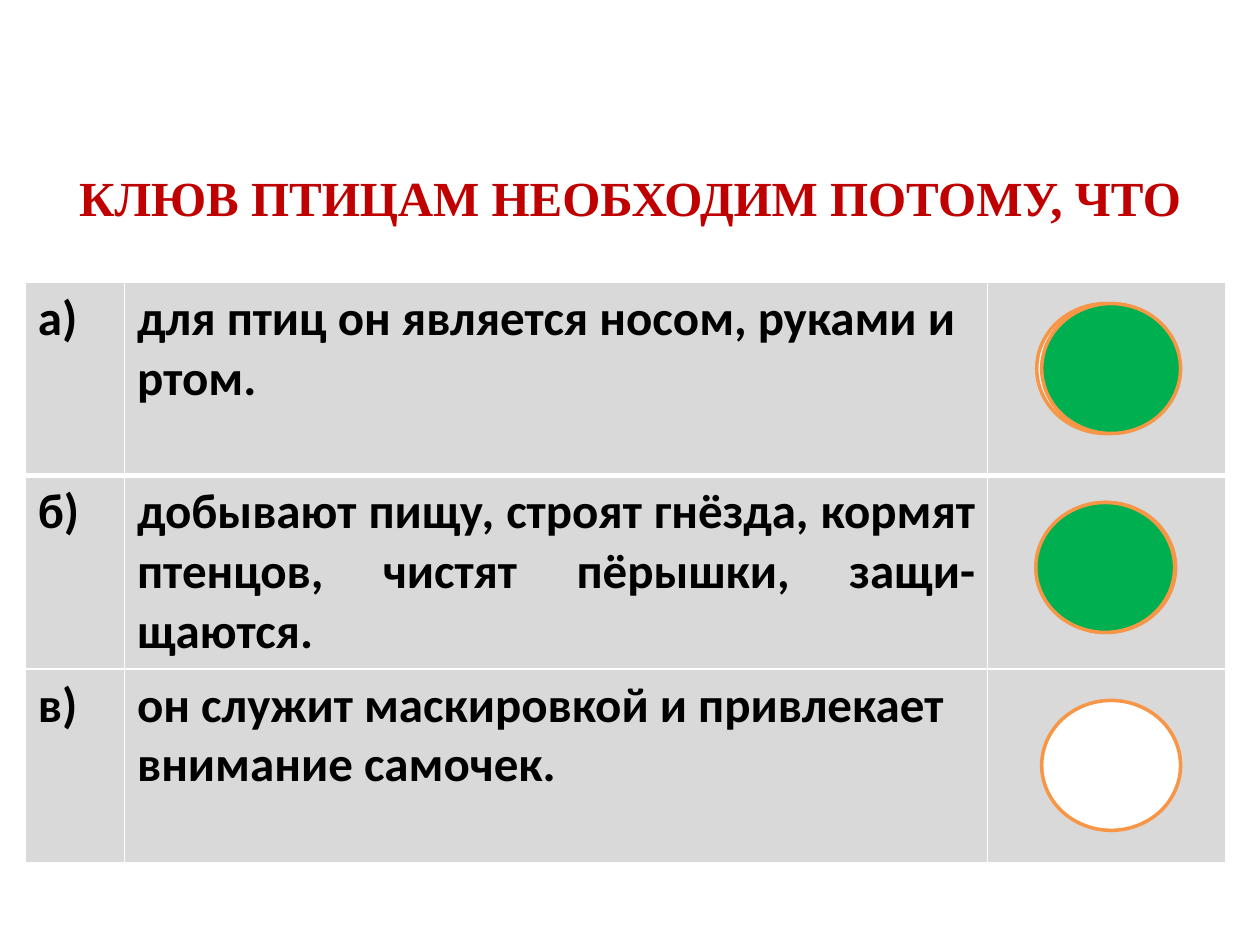
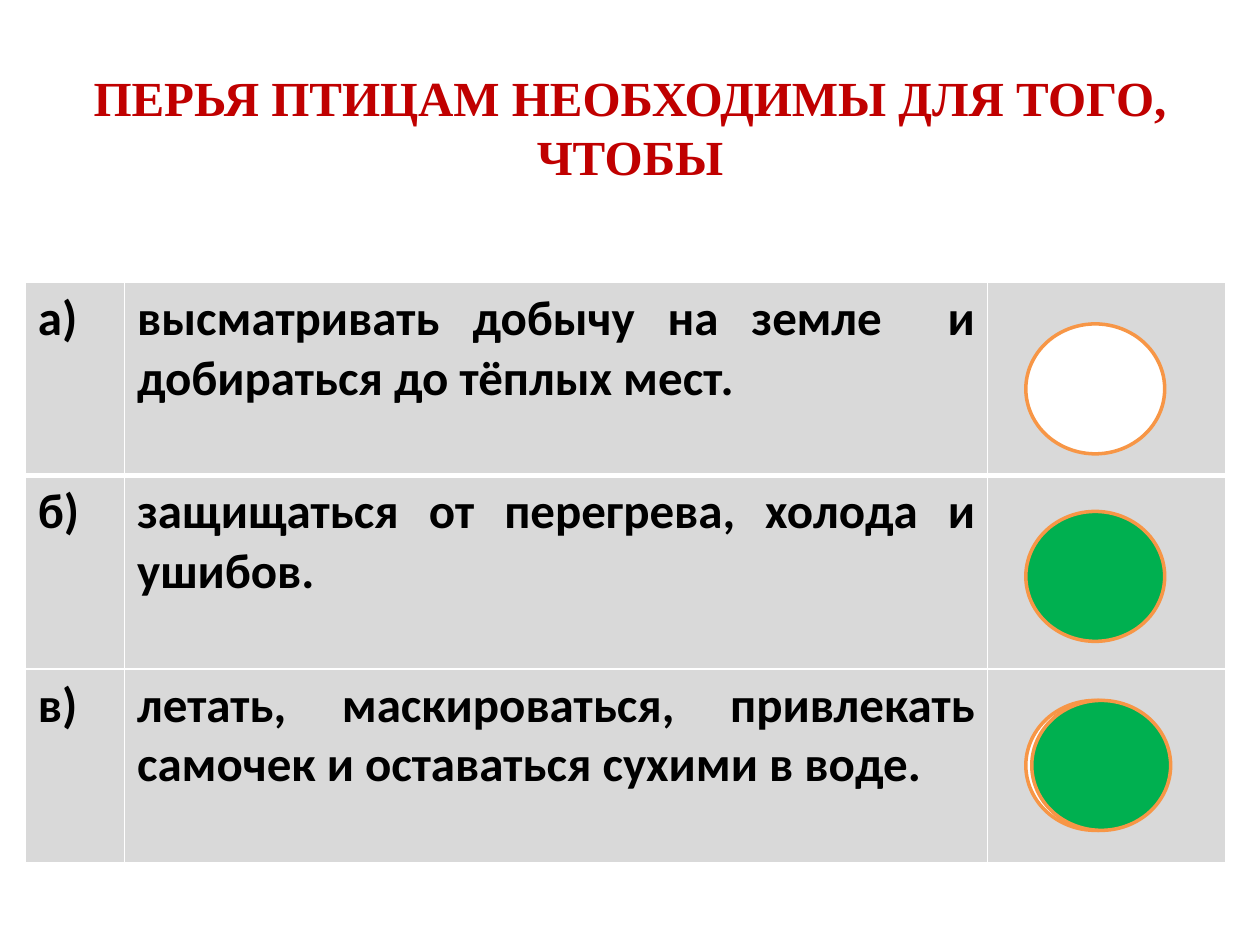
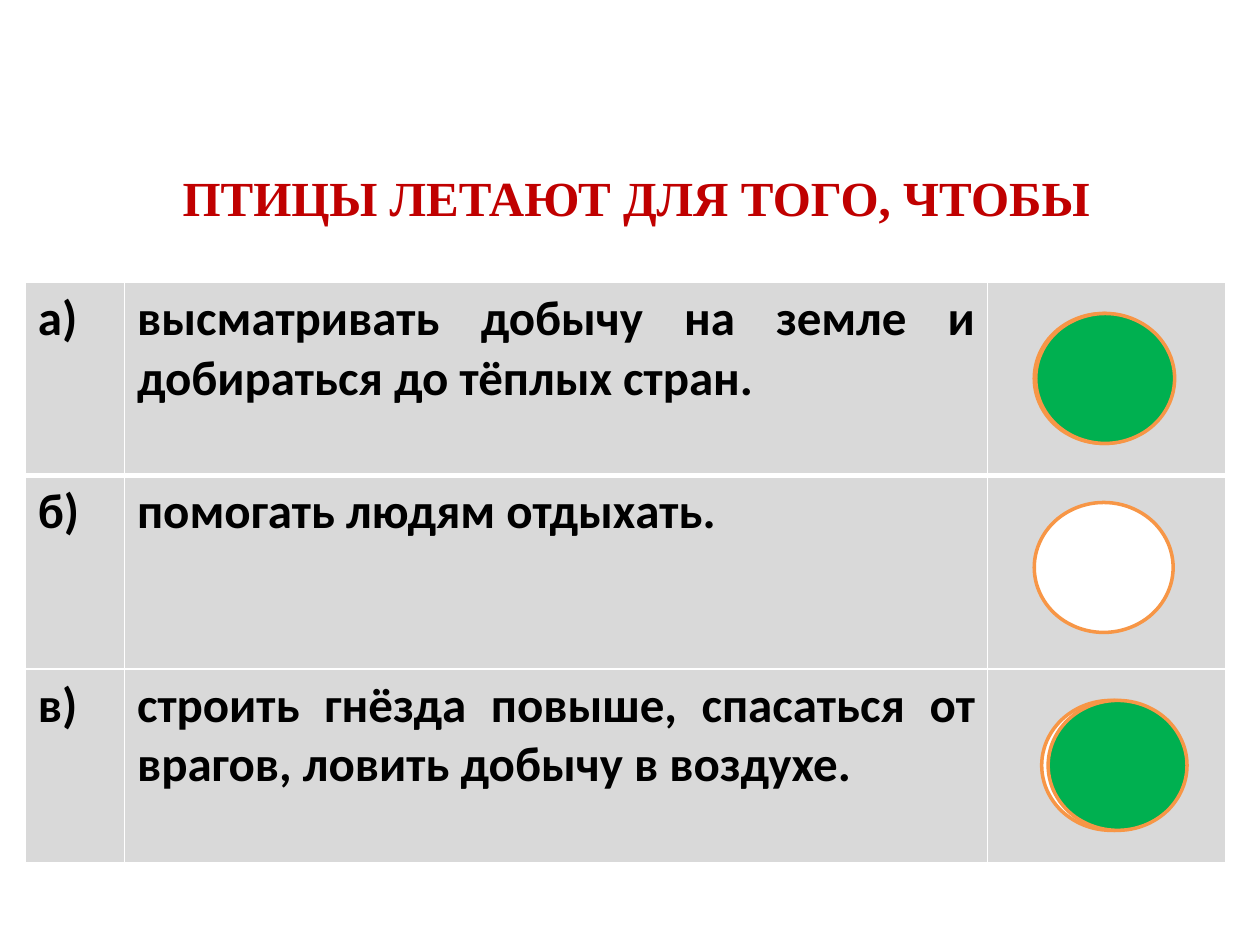
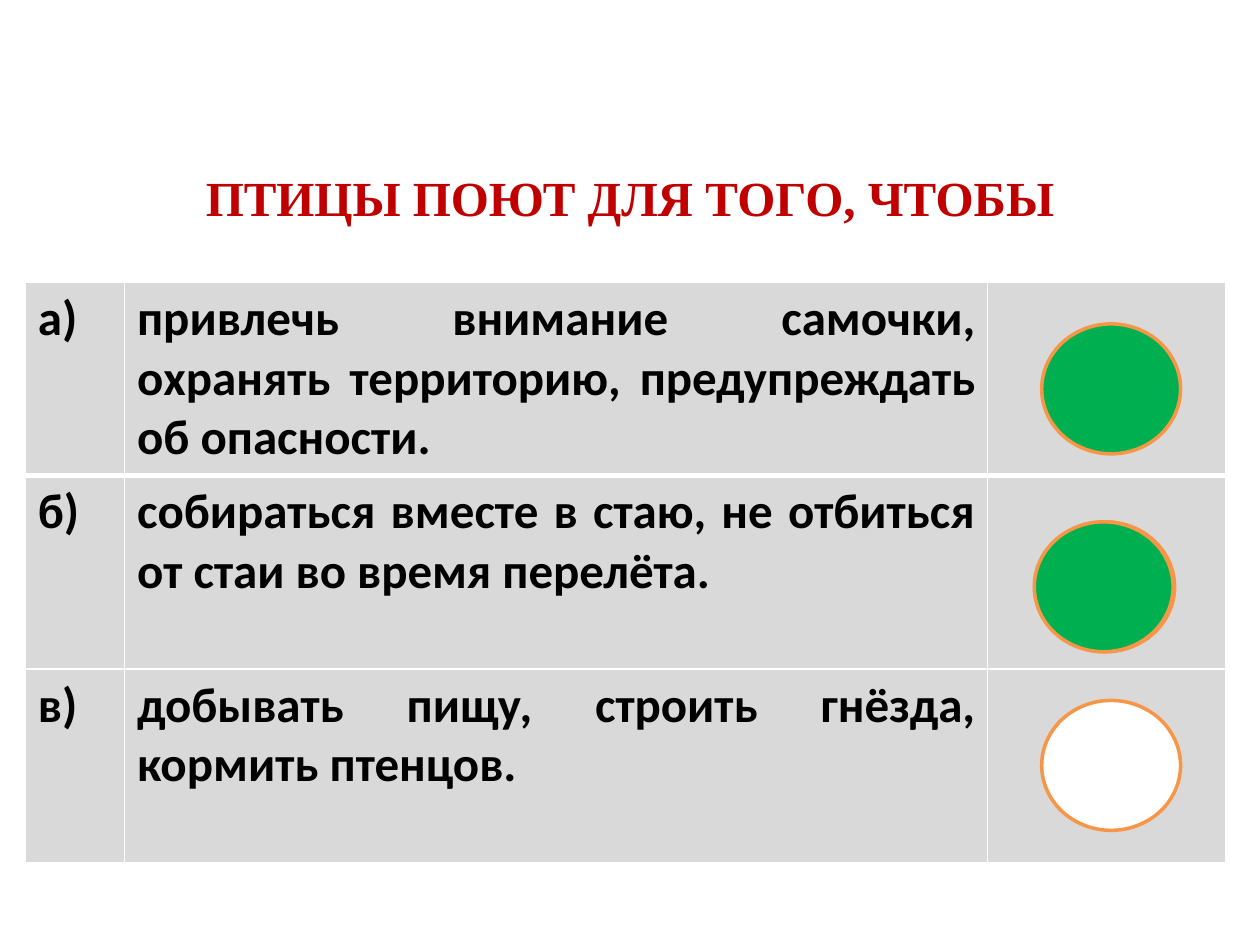
from dataclasses import dataclass

from lxml.etree import SubElement
from pptx import Presentation
from pptx.dml.color import RGBColor
from pptx.enum.shapes import MSO_SHAPE as Shape
from pptx.enum.text import MSO_ANCHOR as Anchor, MSO_AUTO_SIZE as AutoSize, PP_ALIGN as Align
from pptx.oxml.ns import qn
from pptx.util import Cm, Pt


@dataclass(frozen=True)
class Theme:
    title: str = "C00000"
    text: str = "000000"
    cell: str = "D9D9D9"
    border: str = "FFFFFF"
    blank: str = "FFFFFF"
    correct: str = "00B050"
    outline: str = "F79646"
    title_font: str = "Times New Roman"
    body_font: str = "Calibri"
    size: int = 28
    outline_width: int = 2
    thin: int = 1
    thick: int = 3


@dataclass(frozen=True)
class Answer:
    text: str
    align: Align = Align.JUSTIFY


@dataclass(frozen=True)
class Mark:
    left: float
    top: float
    correct: bool = False


@dataclass(frozen=True)
class Question:
    title: str
    answers: tuple[Answer, ...]
    marks: tuple[Mark, ...]
    left: float = 0
    top: float = 3.12
    width: float = 25.4
    height: float = 3


THEME = Theme()
SLIDE_WIDTH, SLIDE_HEIGHT = Cm(25.4), Cm(19.05)
TABLE_LEFT, TABLE_TOP = Cm(0.51), Cm(5.69)
COLUMN_WIDTHS = (Cm(2), Cm(17.4), Cm(4.8))
ROW_HEIGHT = Cm(3.9)
MARK_WIDTH, MARK_HEIGHT = Cm(2.8), Cm(2.62)
TITLE_INSET = Cm(0.25)
LETTERS = ("а)", "б)", "в)")

QUESTIONS = (
    Question(
        "КЛЮВ ПТИЦАМ НЕОБХОДИМ ПОТОМУ, ЧТО",
        (
            Answer("для птиц он является носом, руками и ртом.", Align.LEFT),
            Answer("добывают пищу, строят гнёзда, кормят птенцов, чистят пёрышки, защи-щаются."),
            Answer("он служит маскировкой и привлекает внимание самочек.", Align.LEFT),
        ),
        (
            Mark(20.9, 6.12),
            Mark(20.9, 10.13),
            Mark(21, 14.12),
            Mark(20.88, 10.13, True),
            Mark(21, 6.12, True),
        ),
        left=0.9,
        width=23.6,
        height=3.78,
    ),
    Question(
        "ПЕРЬЯ ПТИЦАМ НЕОБХОДИМЫ ДЛЯ ТОГО, ЧТОБЫ",
        (
            Answer("высматривать добычу на земле  и добираться до тёплых мест."),
            Answer("защищаться от перегрева, холода и ушибов."),
            Answer("летать, маскироваться, привлекать самочек и оставаться сухими в воде."),
        ),
        (
            Mark(20.68, 14.12),
            Mark(20.68, 6.53),
            Mark(20.68, 10.31, True),
            Mark(20.8, 14.12, True),
        ),
        top=1.12,
    ),
    Question(
        " ПТИЦЫ ЛЕТАЮТ ДЛЯ ТОГО, ЧТОБЫ",
        (
            Answer("высматривать добычу на земле и добираться до тёплых стран."),
            Answer("помогать людям отдыхать."),
            Answer("строить гнёзда повыше, спасаться от врагов, ловить добычу в воздухе."),
        ),
        (
            Mark(21, 14.12),
            Mark(20.85, 10.13),
            Mark(20.85, 6.32),
            Mark(20.88, 6.32, True),
            Mark(21.13, 14.12, True),
        ),
    ),
    Question(
        "ПТИЦЫ ПОЮТ ДЛЯ ТОГО, ЧТОБЫ",
        (
            Answer("привлечь внимание самочки, охранять территорию, предупреждать об опасности."),
            Answer("собираться вместе в стаю, не отбиться от стаи во время перелёта."),
            Answer("добывать пищу, строить гнёзда, кормить птенцов."),
        ),
        (
            Mark(21, 14.12),
            Mark(20.88, 10.52),
            Mark(21, 6.53, True),
            Mark(20.85, 10.52, True),
        ),
    ),
)


def write(tf, text: str, font: str, color: str, align: Align) -> None:
    p = tf.paragraphs[0]
    p.text = text
    p.alignment = align
    for r in p.runs:
        r.font.name = font
        r.font.size = Pt(THEME.size)
        r.font.bold = True
        r.font.color.rgb = RGBColor.from_string(color)


def add_title(s, question: Question) -> None:
    sp = s.shapes.title
    sp.left, sp.top = Cm(question.left), Cm(question.top)
    sp.width, sp.height = Cm(question.width), Cm(question.height)
    tf = sp.text_frame
    tf.auto_size = AutoSize.NONE
    tf.word_wrap = True
    tf.vertical_anchor = Anchor.TOP
    tf.margin_top = TITLE_INSET
    write(tf, question.title, THEME.title_font, THEME.title, Align.CENTER)


def style_cell(cell, row: int) -> None:
    tc_pr = cell._tc.get_or_add_tcPr()
    widths = {
        "a:lnL": THEME.thin,
        "a:lnR": THEME.thin,
        "a:lnT": THEME.thick if row == 1 else THEME.thin,
        "a:lnB": THEME.thick if row == 0 else THEME.thin,
    }
    for tag, width in widths.items():
        line = SubElement(tc_pr, qn(tag), w=str(Pt(width)))
        fill = SubElement(line, qn("a:solidFill"))
        SubElement(fill, qn("a:srgbClr"), val=THEME.border)
    cell.fill.solid()
    cell.fill.fore_color.rgb = RGBColor.from_string(THEME.cell)


def add_answers(s, answers: tuple[Answer, ...]) -> None:
    rows = len(answers)
    table = s.shapes.add_table(
        rows, len(COLUMN_WIDTHS), TABLE_LEFT, TABLE_TOP, sum(COLUMN_WIDTHS), ROW_HEIGHT * rows
    ).table
    table.first_row = table.horz_banding = False
    for column, width in zip(table.columns, COLUMN_WIDTHS):
        column.width = width
    for i, (letter, answer) in enumerate(zip(LETTERS, answers)):
        table.rows[i].height = ROW_HEIGHT
        for cell in table.rows[i].cells:
            style_cell(cell, i)
        for j, (text, align) in enumerate(((letter, Align.LEFT), (answer.text, answer.align))):
            write(table.cell(i, j).text_frame, text, THEME.body_font, THEME.text, align)


def add_mark(s, mark: Mark) -> None:
    sp = s.shapes.add_shape(Shape.OVAL, Cm(mark.left), Cm(mark.top), MARK_WIDTH, MARK_HEIGHT)
    sp.shadow.inherit = False
    sp.fill.solid()
    sp.fill.fore_color.rgb = RGBColor.from_string(THEME.correct if mark.correct else THEME.blank)
    sp.line.color.rgb = RGBColor.from_string(THEME.outline)
    sp.line.width = Pt(THEME.outline_width)


def main() -> None:
    prs = Presentation()
    prs.slide_width, prs.slide_height = SLIDE_WIDTH, SLIDE_HEIGHT
    title_only = prs.slide_layouts.get_by_name("Title Only")
    for question in QUESTIONS:
        s = prs.slides.add_slide(title_only)
        add_title(s, question)
        add_answers(s, question.answers)
        for mark in question.marks:
            add_mark(s, mark)
    prs.save("out.pptx")


if __name__ == "__main__":
    main()
